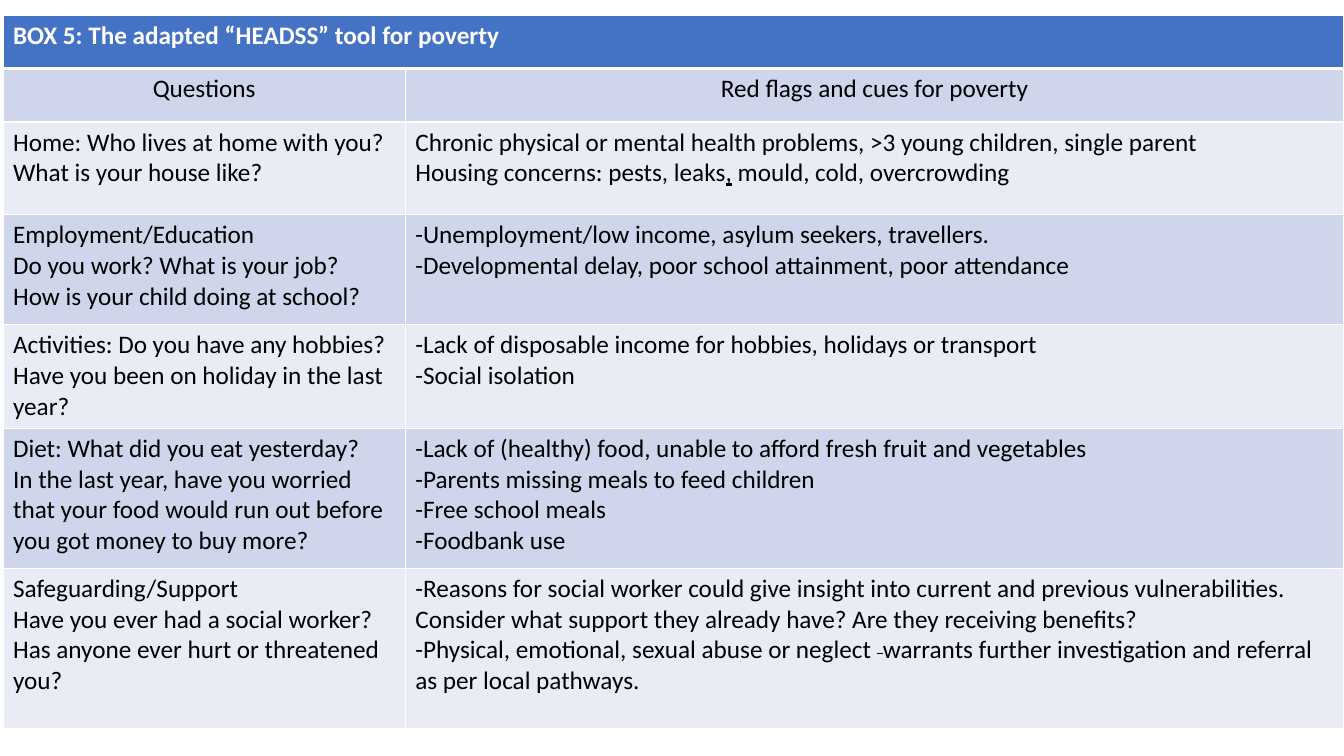
"""Build the slide with the adapted HEADSS tool for poverty."""
from dataclasses import dataclass

from lxml import etree
from pptx import Presentation
from pptx import util as u
from pptx.dml.color import RGBColor
from pptx.enum import text
from pptx.oxml.ns import qn

EMU_PER_PX = 9144


@dataclass(frozen=True)
class Theme:
    """Colours, font and sizes of the slide."""
    header: str = "4472C4"
    bands: tuple = ("CFD5EA", "E9EBF5")
    ink: str = "000000"
    paper: str = "FFFFFF"
    font: str = "Calibri"
    size: int = 18
    thin_line: int = 1
    thick_line: int = 3


THEME = Theme()
COLUMN_WIDTHS = (399, 931)
ROW_HEIGHTS = (53, 53, 92, 109, 103, 139, 159)
TITLE = "BOX 5: The adapted “HEADSS” tool for poverty"
HEADINGS = ("Questions", "Red flags and cues for poverty")
TOPICS = (
    (["Home: Who lives at home with you? What is your house like?"],
     ["Chronic physical or mental health problems, >3 young children, single parent",
      ["Housing concerns: pests, leaks", (",", "underline"),
       " mould, cold, overcrowding"]]),
    (["Employment/Education",
      "Do you work? What is your job?",
      "How is your child doing at school?"],
     ["-Unemployment/low income, asylum seekers, travellers.",
      "-Developmental delay, poor school attainment, poor attendance"]),
    (["Activities: Do you have any hobbies? Have you been on holiday in the last year?"],
     ["-Lack of disposable income for hobbies, holidays or transport",
      "-Social isolation"]),
    (["Diet: What did you eat yesterday?",
      "In the last year, have you worried that your food would run out before "
      "you got money to buy more?"],
     ["-Lack of (healthy) food, unable to afford fresh fruit and vegetables",
      "-Parents missing meals to feed children",
      "-Free school meals",
      "-Foodbank use"]),
    (["Safeguarding/Support",
      "Have you ever had a social worker? Has anyone ever hurt or threatened you?"],
     ["-Reasons for social worker could give insight into current and previous "
      "vulnerabilities. Consider what support they already have? "
      "Are they receiving benefits?",
      ["-Physical, emotional, sexual abuse or neglect ", (" ", "strike"),
       "warrants further investigation and referral as per local pathways."]]),
)


def px(length):
    """Turn a length in px into EMU."""
    return u.Emu(length * EMU_PER_PX)


def add_span(para, content, colour, bold):
    """Add one run, given as plain text or as text with a mark."""
    words, mark = (content, None) if isinstance(content, str) else content
    span = para.add_run()
    span.text = words
    span.font.name = THEME.font
    span.font.size = u.Pt(THEME.size)
    span.font.bold = bold
    span.font.color.rgb = RGBColor.from_string(colour)
    if mark == "underline":
        span.font.underline = True
    elif mark == "strike":
        span.font._element.set("strike", "sngStrike")


def fill_cell(cell, paragraphs, fill, colour=THEME.ink, bold=False, align=None):
    """Fill a cell with a colour and its paragraphs."""
    cell.fill.solid()
    cell.fill.fore_color.rgb = RGBColor.from_string(fill)
    for index, content in enumerate(paragraphs):
        frame = cell.text_frame
        para = frame.add_paragraph() if index else frame.paragraphs[0]
        para.alignment = align
        for part in [content] if isinstance(content, str) else content:
            add_span(para, part, colour, bold)


def set_borders(cell, top, bottom):
    """Draw the four borders of a cell, with widths in points."""
    properties = cell._tc.get_or_add_tcPr()
    widths = {"L": THEME.thin_line, "R": THEME.thin_line, "T": top, "B": bottom}
    for position, (side, width) in enumerate(widths.items()):
        line = etree.Element(qn(f"a:ln{side}"), w=str(u.Pt(width)))
        solid = etree.SubElement(line, qn("a:solidFill"))
        etree.SubElement(solid, qn("a:srgbClr"), val=THEME.paper)
        properties.insert(position, line)


def add_grid(page):
    """Add the empty table with its column widths and row heights."""
    table = page.shapes.add_table(
        len(ROW_HEIGHTS), len(COLUMN_WIDTHS), px(3), px(15),
        px(sum(COLUMN_WIDTHS)), px(sum(ROW_HEIGHTS))).table
    for column, width in zip(table.columns, COLUMN_WIDTHS):
        column.width = px(width)
    for row, height in zip(table.rows, ROW_HEIGHTS):
        row.height = px(height)
    return table


def fill_table(table):
    """Write the title, the headings and the topics."""
    table.cell(0, 0).merge(table.cell(0, 1))
    fill_cell(table.cell(0, 0), [TITLE], THEME.header, THEME.paper, bold=True)
    for column, heading in enumerate(HEADINGS):
        fill_cell(table.cell(1, column), [heading], THEME.bands[0],
                  align=text.PP_ALIGN.CENTER)
    for row, topic in enumerate(TOPICS, start=2):
        for column, paragraphs in enumerate(topic):
            fill_cell(table.cell(row, column), paragraphs, THEME.bands[(row - 1) % 2])
    for index, row in enumerate(table.rows):
        for cell in row.cells:
            set_borders(cell,
                        top=THEME.thick_line if index == 1 else THEME.thin_line,
                        bottom=THEME.thick_line if index == 0 else THEME.thin_line)


def main():
    """Build and save the deck."""
    deck = Presentation()
    deck.slide_width, deck.slide_height = px(1333), px(750)
    page = deck.slides.add_slide(deck.slide_layouts[6])
    fill_table(add_grid(page))
    deck.save("out.pptx")


if __name__ == "__main__":
    main()
